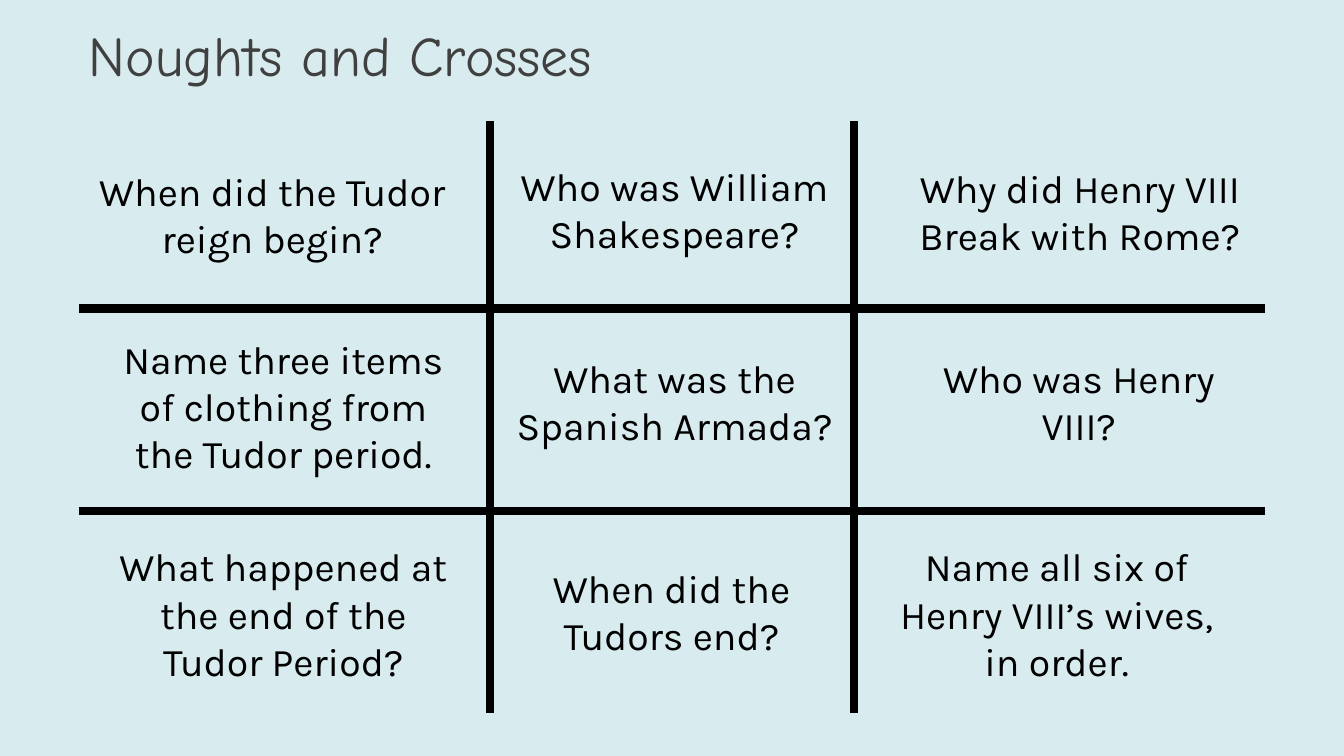
from dataclasses import dataclass
from itertools import product
from pptx import Presentation
from pptx.dml.color import RGBColor
from pptx.enum.shapes import MSO_CONNECTOR
from pptx.enum.text import MSO_ANCHOR, MSO_AUTO_SIZE, PP_ALIGN
from pptx.oxml.ns import qn
from pptx.util import Inches, Pt
from lxml.etree import SubElement


@dataclass(frozen=True)
class Theme:
    back: str = "D8EBEE"
    ink: str = "000000"
    head: str = "404040"
    head_font: str = "Comic Neue"
    body_font: str = "Karla"
    head_size: int = 40
    body_size: int = 28
    rule: int = 6


THEME = Theme()
WIDE, HIGH = 13.33, 7.5
LEFT, RIGHT, TOP, LOW = 0.78, 12.55, 1.2, 7.07
COL_RULES = (4.86, 8.47)
ROW_RULES = (3.06, 5.07)
COL_MIDS = (2.81, 6.69, 10.7)
ROW_MIDS = (2.1, 4.01, 6.08)
CELL_WIDE, LINE_HIGH, PAD = 3.57, 0.47, 0.1

# Text, lines, shift from the cell's middle, extra width
CELLS = (
    ("When did the Tudor reign begin?", 2, (-0.11, 0.03), 0.75),
    ("Who was William Shakespeare?", 2, (0, -0.02), 0),
    ("Why did Henry VIII Break with Rome?", 2, (0.01, 0), 0),
    ("Name three items of clothing from the Tudor period.", 3, (0, 0.02), 0),
    ("What was the Spanish Armada?", 2, (0, -0.02), 0),
    ("Who was Henry VIII?", 2, (0, -0.02), 0),
    ("What happened at the end of the Tudor Period?", 3, (0, 0.01), 0),
    ("When did the Tudors end?", 2, (-0.03, -0.01), 0),
    ("Name all six of Henry VIII’s wives, in order.", 3, (-0.22, 0.01), 0),
)


def add_run(para, text, font, size, color):
    run = para.add_run()
    run.text = text
    run.font.name = font
    run.font.size = Pt(size)
    run.font.color.rgb = RGBColor.from_string(color)


def add_title(slide, text):
    title = slide.shapes.title
    title.left, title.top = Inches(LEFT), Inches(0.2)
    title.width, title.height = Inches(10.45), Inches(0.75)
    frame = title.text_frame
    frame.word_wrap = True
    frame.auto_size = MSO_AUTO_SIZE.NONE
    frame.vertical_anchor = MSO_ANCHOR.MIDDLE
    para = frame.paragraphs[0]
    para.alignment = PP_ALIGN.LEFT
    para.line_spacing = 0.9
    add_run(para, text, THEME.head_font, THEME.head_size, THEME.head)


def add_rule(slide, *ends):
    line = slide.shapes.add_connector(MSO_CONNECTOR.STRAIGHT, *map(Inches, ends))
    line.line.color.rgb = RGBColor.from_string(THEME.ink)
    line.line.width = Pt(THEME.rule)
    SubElement(line._element.spPr, qn("a:effectLst"))


def add_cell(slide, mid_x, mid_y, text, lines, shift, extra):
    wide, high = CELL_WIDE + extra, PAD + LINE_HIGH * lines
    left, top = mid_x + shift[0] - wide / 2, mid_y + shift[1] - high / 2
    box = slide.shapes.add_textbox(*map(Inches, (left, top, wide, high)))
    frame = box.text_frame
    frame.word_wrap = True
    frame.auto_size = MSO_AUTO_SIZE.SHAPE_TO_FIT_TEXT
    para = frame.paragraphs[0]
    para.alignment = PP_ALIGN.CENTER
    add_run(para, text, THEME.body_font, THEME.body_size, THEME.ink)


def main():
    deck = Presentation()
    deck.slide_width, deck.slide_height = Inches(WIDE), Inches(HIGH)
    slide = deck.slides.add_slide(deck.slide_layouts[5])
    fill = slide.background.fill
    fill.solid()
    fill.fore_color.rgb = RGBColor.from_string(THEME.back)

    add_title(slide, "Noughts and Crosses")
    for x in COL_RULES:
        add_rule(slide, x, TOP, x, LOW)
    for y in ROW_RULES:
        add_rule(slide, LEFT, y, RIGHT, y)
    for (y, x), cell in zip(product(ROW_MIDS, COL_MIDS), CELLS):
        add_cell(slide, x, y, *cell)
    deck.save("out.pptx")


if __name__ == "__main__":
    main()
